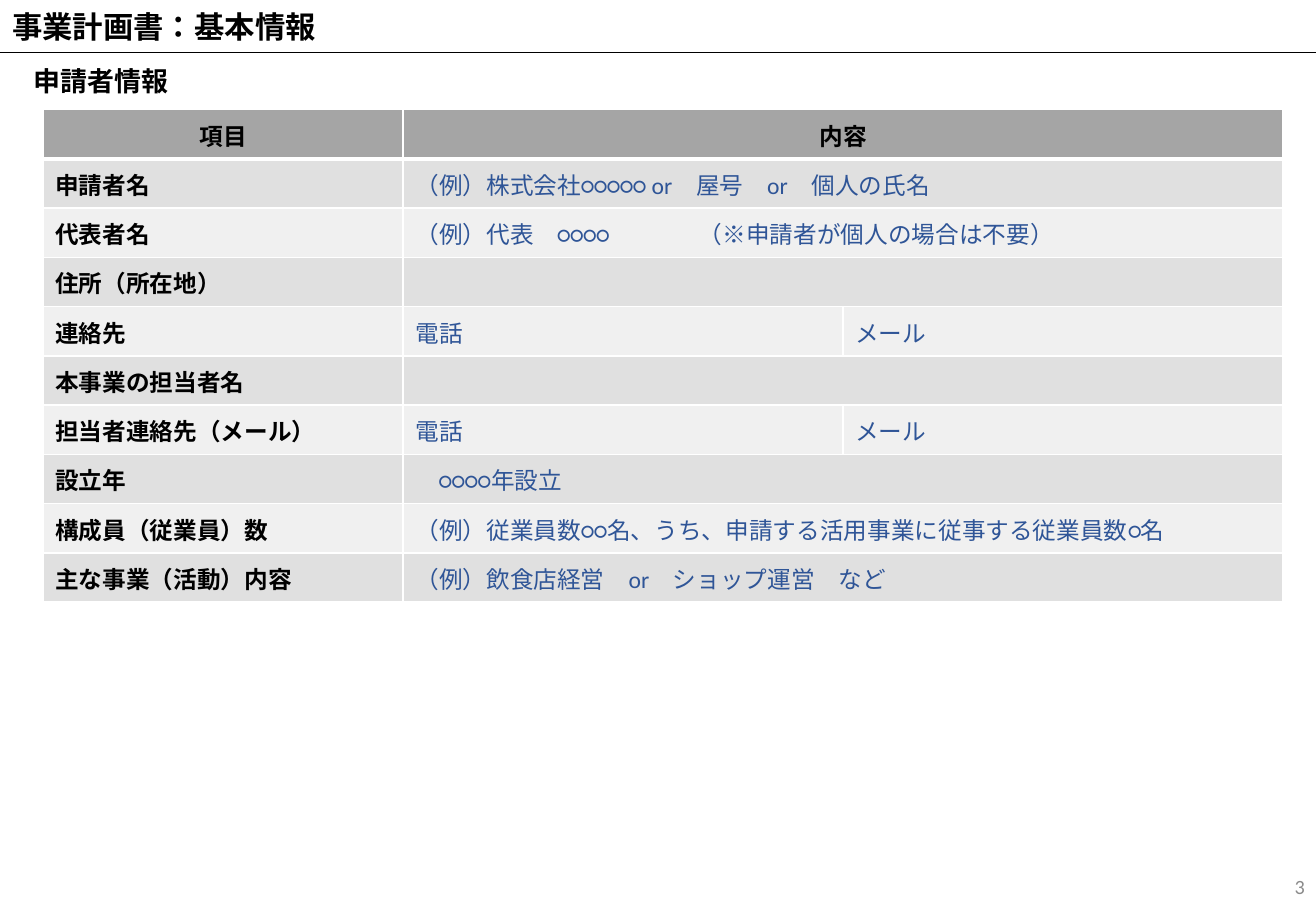
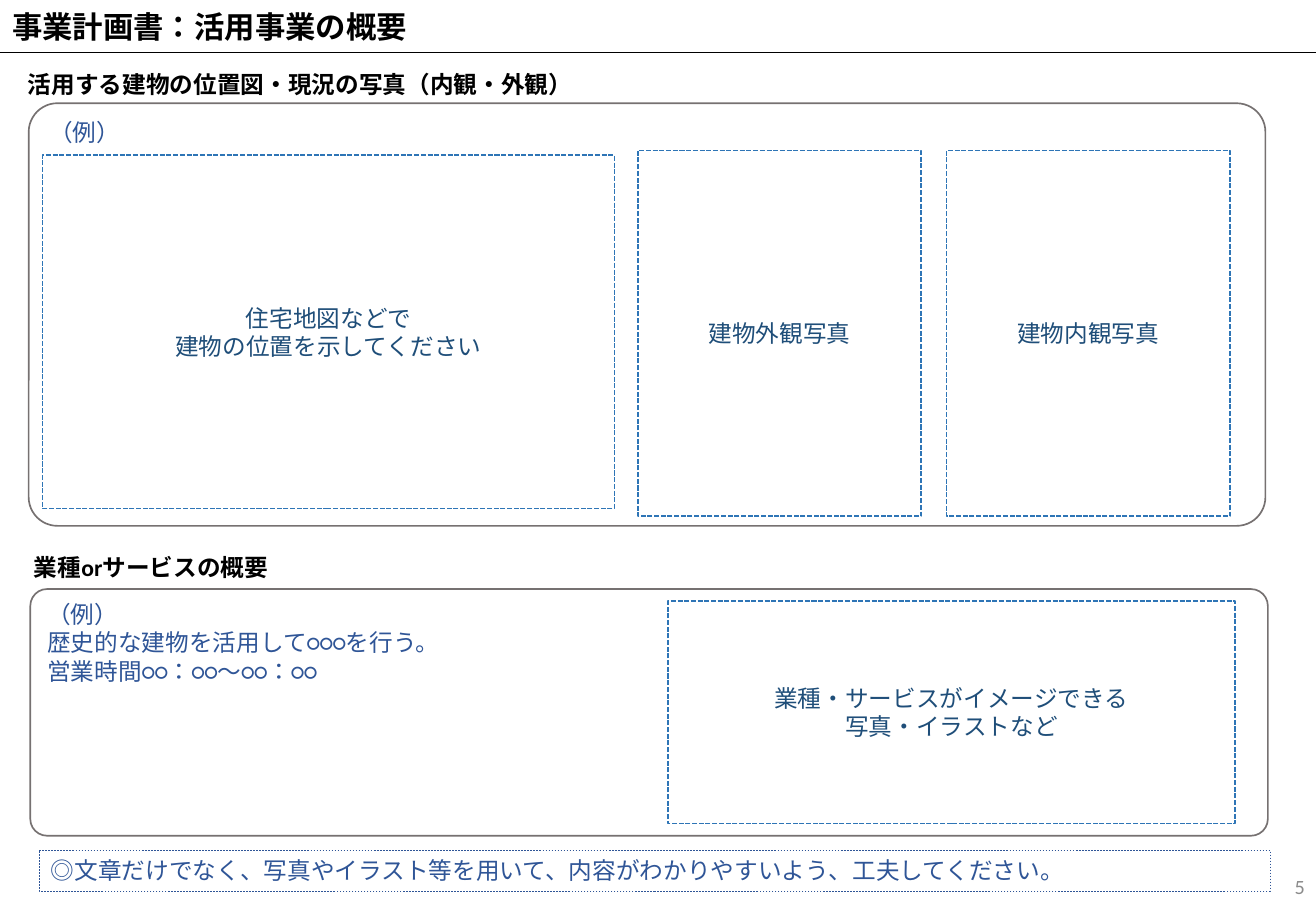
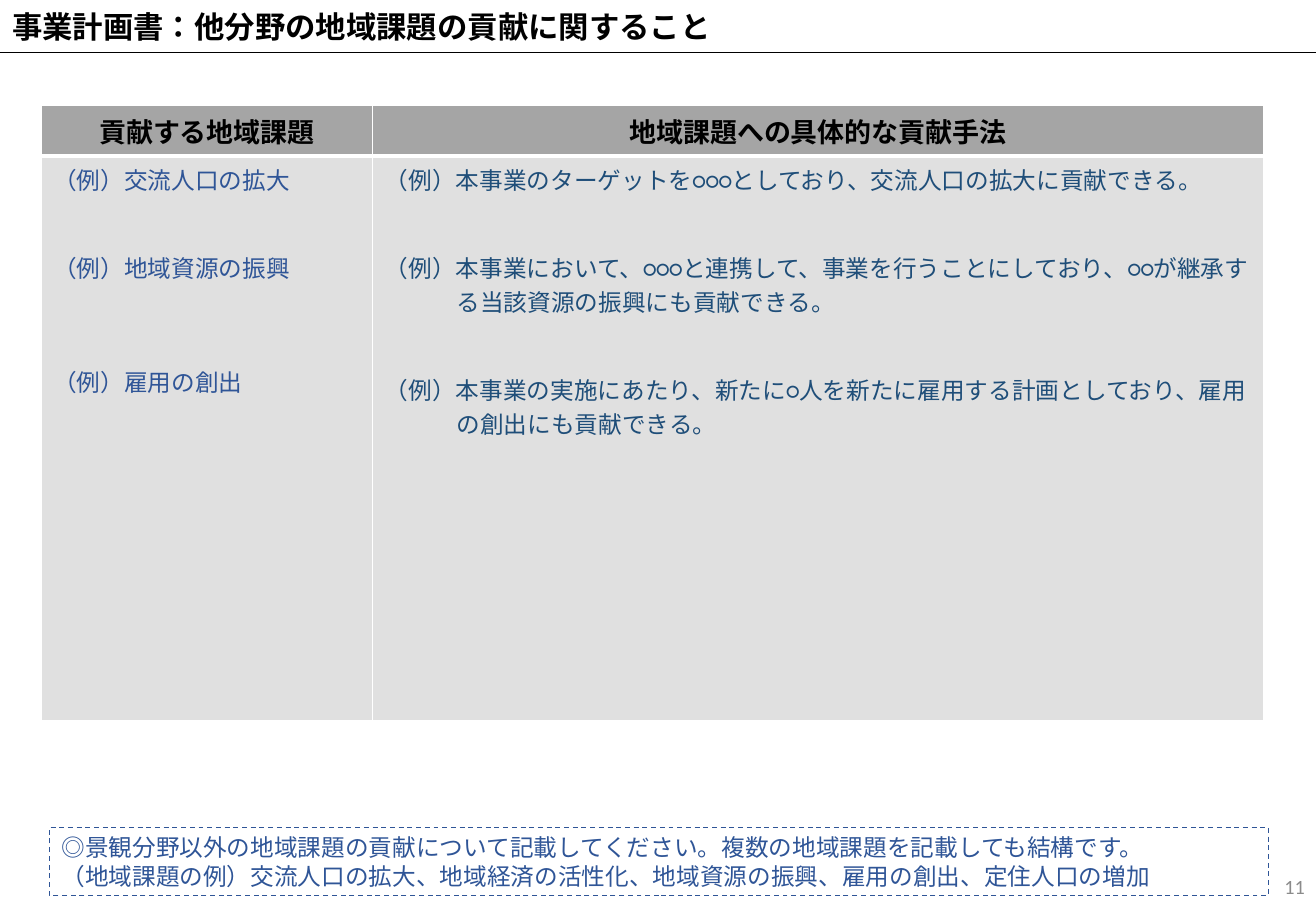
from lxml import etree
from pptx import Presentation
from pptx import util as u
from pptx.dml.color import RGBColor
from pptx.enum import dml, lang, shapes, text
from pptx.oxml import ns

Pt = u.Pt
FONT = "Calibri"
BLACK = RGBColor(0x00, 0x00, 0x00)
WHITE = RGBColor(0xFF, 0xFF, 0xFF)
NUMBER_GREY = RGBColor(0x8B, 0x8B, 0x8B)
PANEL_GREY = RGBColor(0x76, 0x71, 0x71)
HEAD_GREY = RGBColor(0xA5, 0xA5, 0xA5)
BAND_DARK = RGBColor(0xE0, 0xE0, 0xE0)
BAND_LIGHT = RGBColor(0xF0, 0xF0, 0xF0)
SAMPLE_BLUE = RGBColor(0x2F, 0x55, 0x97)
DEEP_BLUE = RGBColor(0x1F, 0x4E, 0x79)
FRAME_BLUE = RGBColor(0x2E, 0x75, 0xB6)

PAGE_WIDTH, PAGE_HEIGHT = 780, 540
RULE_TOP = 31
BODY_SIZE = 14
TABLE_LEADING = 1.44
ROW_HEIGHT = 29.2
THIN, THICK = 0.96, 3
HANG = 42.5
LEFT, CENTER, RIGHT = text.PP_ALIGN.LEFT, text.PP_ALIGN.CENTER, text.PP_ALIGN.RIGHT
TOP, MIDDLE = text.MSO_ANCHOR.TOP, text.MSO_ANCHOR.MIDDLE


def add_span(para, words, size, color, bold=False):
    span = para.add_run()
    span.text = words
    font = span.font
    font.name, font.size, font.bold = FONT, Pt(size), bold
    font.color.rgb = color
    font.language_id = lang.MSO_LANGUAGE_ID.JAPANESE
    etree.SubElement(span._r.get_or_add_rPr(), ns.qn("a:ea")).set("typeface", FONT)


def write_lines(frame, lines, size, color, bold=False, align=LEFT):
    for index, words in enumerate(lines):
        para = frame.paragraphs[0] if index == 0 else frame.add_paragraph()
        para.alignment = align
        add_span(para, words, size, color, bold)


def set_indent(para, margin, first=0):
    properties = para._p.get_or_add_pPr()
    properties.set("marL", str(Pt(margin)))
    properties.set("indent", str(Pt(first)))


def set_tab(para, position):
    tabs = etree.SubElement(para._p.get_or_add_pPr(), ns.qn("a:tabLst"))
    etree.SubElement(tabs, ns.qn("a:tab"), pos=str(Pt(position)), algn="l")


def add_label(page, place, words, size, color=BLACK, bold=True, align=LEFT, anchor=TOP):
    box = page.shapes.add_textbox(*map(Pt, place))
    box.text_frame.word_wrap = True
    box.text_frame.vertical_anchor = anchor
    write_lines(box.text_frame, [words], size, color, bold, align)


def add_box(page, place, lines, kind, line_color, line_width, dash=None, fill=None,
            color=SAMPLE_BLUE, align=LEFT, anchor=TOP):
    box = page.shapes.add_shape(kind, *map(Pt, place))
    box.shadow.inherit = False
    if fill is None:
        box.fill.background()
    else:
        box.fill.solid()
        box.fill.fore_color.rgb = fill
    box.line.color.rgb = line_color
    box.line.width = Pt(line_width)
    if dash is not None:
        box.line.dash_style = dash
    box.text_frame.word_wrap = True
    box.text_frame.vertical_anchor = anchor
    write_lines(box.text_frame, lines, BODY_SIZE, color, align=align)
    return box


def add_panel(page, place, lines):
    panel = add_box(page, place, lines, shapes.MSO_SHAPE.ROUNDED_RECTANGLE, PANEL_GREY, 1)
    panel.adjustments[0] = 0.068


def add_photo_frame(page, place, lines):
    add_box(page, place, lines, shapes.MSO_SHAPE.RECTANGLE, FRAME_BLUE, 1,
            dml.MSO_LINE.SQUARE_DOT, WHITE, DEEP_BLUE, CENTER, MIDDLE)


def add_note(page, place, lines, line_width):
    add_box(page, place, lines, shapes.MSO_SHAPE.RECTANGLE, SAMPLE_BLUE, line_width,
            dml.MSO_LINE.DASH)


def add_page(deck, title, number):
    page = deck.slides.add_slide(deck.slide_layouts[5])
    heading = page.shapes.title
    heading.left, heading.top, heading.width, heading.height = map(Pt, (0, 1.5, PAGE_WIDTH, 29))
    frame = heading.text_frame
    frame.auto_size = text.MSO_AUTO_SIZE.NONE
    frame.vertical_anchor = TOP
    write_lines(frame, [title], 18, BLACK, True)
    rule = page.shapes.add_connector(
        shapes.MSO_CONNECTOR.STRAIGHT, 0, Pt(RULE_TOP), Pt(PAGE_WIDTH), Pt(RULE_TOP))
    rule.line.color.rgb = BLACK
    rule.line.width = Pt(0.75)
    etree.SubElement(rule._element.spPr, ns.qn("a:effectLst"))
    add_label(page, (604.5, 511, 176, 29), number, 12, NUMBER_GREY, False, RIGHT, MIDDLE)
    return page


def style_cell(cell, fill, top, bottom, anchor):
    properties = cell._tc.get_or_add_tcPr()
    for side, width in (("L", THIN), ("R", THIN), ("T", top), ("B", bottom)):
        border = etree.SubElement(properties, ns.qn("a:ln" + side), w=str(Pt(width)))
        paint = etree.SubElement(border, ns.qn("a:solidFill"))
        etree.SubElement(paint, ns.qn("a:srgbClr"), val=str(WHITE))
    cell.fill.solid()
    cell.fill.fore_color.rgb = fill
    cell.vertical_anchor = anchor


def fill_cell(cell, lines, size, color, bold=False, align=LEFT):
    write_lines(cell.text_frame, lines, size, color, bold, align)
    for para in cell.text_frame.paragraphs:
        para.line_spacing = Pt(size * TABLE_LEADING)


def add_grid(page, left, top, widths, heights, anchor):
    grid = page.shapes.add_table(
        len(heights), len(widths), Pt(left), Pt(top), Pt(sum(widths)), Pt(sum(heights))).table
    for column, width in zip(grid.columns, widths):
        column.width = Pt(width)
    for index, height in enumerate(heights):
        grid.rows[index].height = Pt(height)
        fill = HEAD_GREY if index == 0 else BAND_DARK if index % 2 else BAND_LIGHT
        for column in range(len(widths)):
            style_cell(grid.cell(index, column), fill, THICK if index == 1 else THIN,
                       THICK if index == 0 else THIN, anchor)
    return grid


def build_applicant(deck):
    page = add_page(deck, "事業計画書：基本情報", "3")
    add_label(page, (13, 34.5, 200, 26), "申請者情報", 16)
    rows = [
        ("項目", "内容"),
        ("申請者名", "（例）株式会社○○○○○ or　屋号　or　個人の氏名"),
        ("代表者名", "（例）代表　○○○○\t（※申請者が個人の場合は不要）"),
        ("住所（所在地）", ""),
        ("連絡先", "電話", "メール"),
        ("本事業の担当者名", ""),
        ("担当者連絡先（メール）", "電話", "メール"),
        ("設立年", "○○○○年設立"),
        ("構成員（従業員）数", "（例）従業員数○○名、うち、申請する活用事業に従事する従業員数○名"),
        ("主な事業（活動）内容", "（例）飲食店経営　or　ショップ運営　など"),
    ]
    grid = add_grid(page, 25.5, 65, (213.5, 260.75, 260.75), [ROW_HEIGHT] * len(rows), MIDDLE)
    for index, row in enumerate(rows):
        if len(row) == 2:
            grid.cell(index, 1).merge(grid.cell(index, 2))
        for column, words in enumerate(row):
            strong = index == 0 or column == 0
            fill_cell(grid.cell(index, column), [words], BODY_SIZE,
                      BLACK if strong else SAMPLE_BLUE, strong, LEFT if index else CENTER)
    set_tab(grid.cell(2, 1).text_frame.paragraphs[0], 168)
    set_indent(grid.cell(7, 1).text_frame.paragraphs[0], BODY_SIZE)


def build_overview(deck):
    page = add_page(deck, "事業計画書：活用事業の概要", "5")
    add_note(page, (23, 504, 730, 24),
             ["◎文章だけでなく、写真やイラスト等を用いて、内容がわかりやすいよう、工夫してください。"], 0.25)
    add_label(page, (9.5, 38, 374, 24), "活用する建物の位置図・現況の写真（内観・外観）", BODY_SIZE)
    add_panel(page, (17, 61.2, 733, 250.5), ["（例）"])
    add_photo_frame(page, (25.2, 92, 339, 209.5), ["住宅地図などで", "建物の位置を示してください"])
    for index, words in enumerate(("建物外観写真", "建物内観写真")):
        add_photo_frame(page, (378 + 183 * index, 89.3, 168, 216.7), [words])
    add_label(page, (13, 324, 317, 24), "業種orサービスの概要", BODY_SIZE)
    add_panel(page, (18, 349.2, 733.5, 146.2),
              ["（例）", "歴史的な建物を活用して○○○を行う。", "営業時間○○：○○～○○：○○"])
    add_photo_frame(page, (396, 356.2, 336, 132),
                    ["業種・サービスがイメージできる", "写真・イラストなど"])


def build_contribution(deck):
    page = add_page(deck, "事業計画書：他分野の地域課題の貢献に関すること", "11")
    add_note(page, (29.3, 490.3, 722.5, 40.5), [
        "◎景観分野以外の地域課題の貢献について記載してください。複数の地域課題を記載しても結構です。",
        "（地域課題の例）交流人口の拡大、地域経済の活性化、地域資源の振興、雇用の創出、定住人口の増加",
    ], 0)
    grid = add_grid(page, 24.4, 62.2, (196.5, 528), (ROW_HEIGHT, 334.5), TOP)
    for column, words in enumerate(("貢献する地域課題", "地域課題への具体的な貢献手法")):
        fill_cell(grid.cell(0, column), [words], 16, BLACK, True, CENTER)
    issues, methods = grid.cell(1, 0), grid.cell(1, 1)
    fill_cell(issues, ["（例）交流人口の拡大", "（例）地域資源の振興", "（例）雇用の創出"],
              BODY_SIZE, SAMPLE_BLUE)
    fill_cell(methods, [
        "（例）本事業のターゲットを○○○としており、交流人口の拡大に貢献できる。",
        "（例）本事業において、○○○と連携して、事業を行うことにしており、○○が継承する当該資源の振興にも貢献できる。",
        "（例）本事業の実施にあたり、新たに○人を新たに雇用する計画としており、雇用の創出にも貢献できる。",
    ], BODY_SIZE, DEEP_BLUE)
    for cell, gaps in ((issues, (0, 32, 47.5)), (methods, (0, 32, 32))):
        for para, gap in zip(cell.text_frame.paragraphs, gaps):
            para.space_before = Pt(gap)
    for para in methods.text_frame.paragraphs:
        set_indent(para, HANG, -HANG)


def main():
    deck = Presentation()
    deck.slide_width, deck.slide_height = Pt(PAGE_WIDTH), Pt(PAGE_HEIGHT)
    build_applicant(deck)
    build_overview(deck)
    build_contribution(deck)
    deck.save("out.pptx")


if __name__ == "__main__":
    main()
